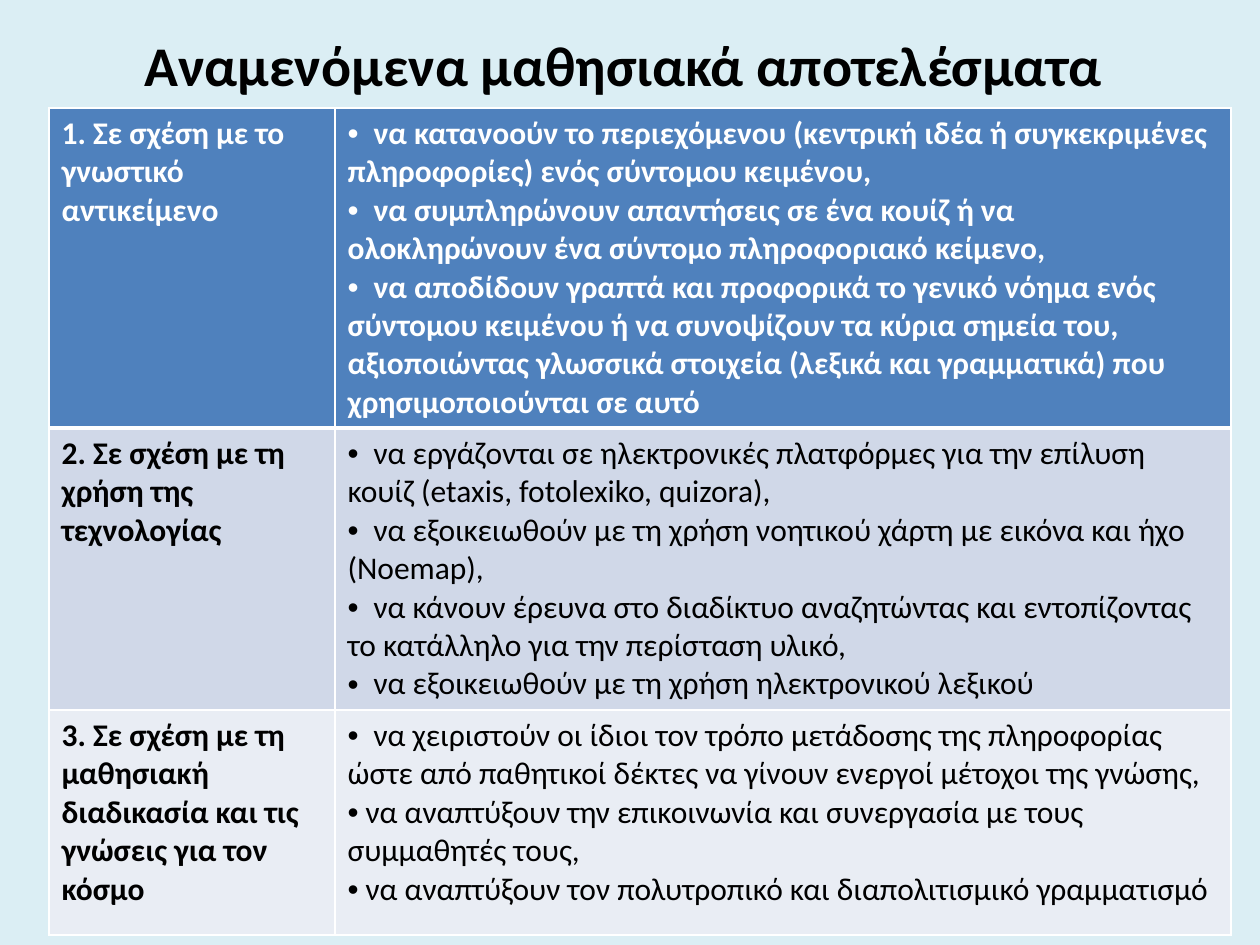
from lxml import etree
from pptx import Presentation
from pptx.dml.color import RGBColor
from pptx.enum.text import MSO_ANCHOR, PP_ALIGN
from pptx.oxml.ns import qn
from pptx.util import Emu, Pt

CENTER, LEFT = PP_ALIGN.CENTER, PP_ALIGN.LEFT
TOP, MIDDLE = MSO_ANCHOR.TOP, MSO_ANCHOR.MIDDLE
FONT = "Calibri"
COLORS = {
    "background": "DBEEF4",
    "header": "4F81BD",
    "band_dark": "D0D8E8",
    "band_light": "E9EDF4",
    "white": "FFFFFF",
    "black": "000000",
}

TITLE = "Αναμενόμενα μαθησιακά αποτελέσματα "
# Each row: heading, fill, height, bullets as (gap after the mark, text)
ROWS = [
    ("1. Σε σχέση με το γνωστικό αντικείμενο", "header", 320, [
        (26, "να κατανοούν το περιεχόμενου (κεντρική ιδέα ή συγκεκριμένες πληροφορίες) ενός σύντομου κειμένου,"),
        (26, "να συμπληρώνουν απαντήσεις σε ένα κουίζ ή να ολοκληρώνουν ένα σύντομο πληροφοριακό κείμενο,"),
        (26, "να αποδίδουν γραπτά και προφορικά το γενικό νόημα ενός σύντομου κειμένου ή να συνοψίζουν "
             "τα κύρια σημεία του, αξιοποιώντας γλωσσικά στοιχεία (λεξικά και γραμματικά) που "
             "χρησιμοποιούνται σε αυτό"),
    ]),
    ("2. Σε σχέση με τη χρήση της τεχνολογίας", "band_dark", 282, [
        (26, "να εργάζονται σε ηλεκτρονικές πλατφόρμες για την επίλυση κουίζ (etaxis, fotolexiko, quizora),"),
        (26, "να εξοικειωθούν με τη χρήση νοητικού χάρτη με εικόνα και ήχο (Noemap),"),
        (26, "να κάνουν έρευνα στο διαδίκτυο αναζητώντας και εντοπίζοντας το κατάλληλο για την περίσταση υλικό,"),
        (26, "να εξοικειωθούν με τη χρήση ηλεκτρονικού λεξικού"),
    ]),
    ("3. Σε σχέση με τη μαθησιακή διαδικασία και τις γνώσεις για τον κόσμο", "band_light", 225, [
        (26, "να χειριστούν οι ίδιοι τον τρόπο μετάδοσης της πληροφορίας ώστε από παθητικοί δέκτες "
             "να γίνουν ενεργοί μέτοχοι της γνώσης,"),
        (18, "να αναπτύξουν την επικοινωνία και συνεργασία με τους συμμαθητές τους,"),
        (18, "να αναπτύξουν τον πολυτροπικό και διαπολιτισμικό γραμματισμό"),
    ]),
]


def px(n):
    return Emu(round(n * 914400 / 126))


def rgb(name):
    return RGBColor.from_string(COLORS[name])


def write(p, text, size=18, color="black", bold=False, align=LEFT):
    p.alignment = align
    r = p.add_run()
    r.text = text
    r.font.name = FONT
    r.font.size = Pt(size)
    r.font.bold = bold
    r.font.color.rgb = rgb(color)


def add_bullet(p, gap):
    """Mark a paragraph whose text starts at a tab stop and wraps back to the edge."""
    ppr = p._p.get_or_add_pPr()
    ppr.set("marL", "0")
    ppr.set("indent", "0")
    etree.SubElement(ppr, qn("a:buFont"), typeface="Arial")
    etree.SubElement(ppr, qn("a:buChar"), char="•")
    tabs = etree.SubElement(ppr, qn("a:tabLst"))
    etree.SubElement(tabs, qn("a:tab"), pos=str(px(gap)), algn="l")


def set_borders(cell, widths):
    """Draw white borders; widths maps each side to points."""
    tcpr = cell._tc.get_or_add_tcPr()
    for i, (side, width) in enumerate(widths.items()):
        ln = etree.Element(qn(f"a:ln{side}"), w=str(Pt(width)))
        fill = etree.SubElement(ln, qn("a:solidFill"))
        etree.SubElement(fill, qn("a:srgbClr"), val=COLORS["white"])
        tcpr.insert(i, ln)


def add_title(s, x, y, w, h):
    tf = s.shapes.add_textbox(px(x), px(y), px(w), px(h)).text_frame
    tf.word_wrap = True
    tf.vertical_anchor = MIDDLE
    write(tf.paragraphs[0], TITLE, size=32, bold=True, align=CENTER)


def add_outcomes(s, x, y, w, heading_w):
    total = sum(row[2] for row in ROWS)
    table = s.shapes.add_table(len(ROWS), 2, px(x), px(y), px(w), px(total)).table
    table.columns[0].width = px(heading_w)
    table.columns[1].width = px(w - heading_w)
    for i, (heading, fill, height, bullets) in enumerate(ROWS):
        table.rows[i].height = px(height)
        is_header = i == 0
        color = "white" if is_header else "black"
        top, bottom = (3 if i == 1 else 1), (3 if is_header else 1)
        for cell in table.rows[i].cells:
            cell.fill.solid()
            cell.fill.fore_color.rgb = rgb(fill)
            cell.vertical_anchor = TOP
            set_borders(cell, {"L": 1, "R": 1, "T": top, "B": bottom})
        write(table.cell(i, 0).text_frame.paragraphs[0], heading, color=color, bold=True)
        tf = table.cell(i, 1).text_frame
        for j, (gap, text) in enumerate(bullets):
            p = tf.add_paragraph() if j else tf.paragraphs[0]
            write(p, "\t" + text, color=color, bold=is_header)
            add_bullet(p, gap)


def main():
    prs = Presentation()
    prs.slide_width, prs.slide_height = px(1260), px(945)
    s = prs.slides.add_slide(prs.slide_layouts[6])
    s.background.fill.solid()
    s.background.fill.fore_color.rgb = rgb("background")
    add_title(s, 63, 20, 1134, 88)
    add_outcomes(s, 49, 108, 1182, 286)
    prs.save("out.pptx")


if __name__ == "__main__":
    main()
